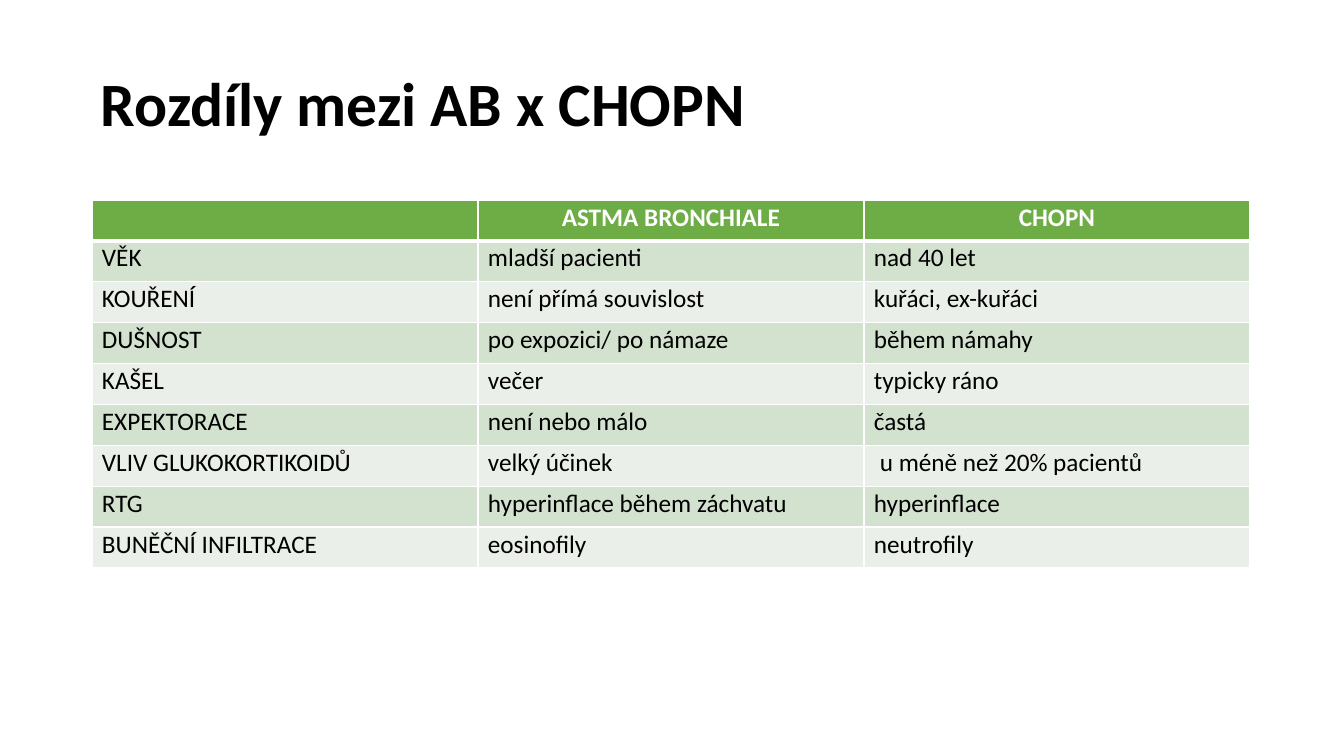
from lxml import etree
from pptx import Presentation
from pptx.dml.color import RGBColor
from pptx.enum.text import MSO_ANCHOR, PP_ALIGN
from pptx.oxml.ns import qn
from pptx.util import Emu, Pt

LEFT, CENTER = PP_ALIGN.LEFT, PP_ALIGN.CENTER
TOP = MSO_ANCHOR.TOP
FONT = "Calibri"
COLORS = {
    "white": "FFFFFF",
    "black": "000000",
    "header": "6EAC46",
    "band_dark": "D3E1CF",
    "band_light": "EBEFE9",
}
ROWS = [
    ["", "ASTMA BRONCHIALE", "CHOPN"],
    ["VĚK", "mladší pacienti", "nad 40 let"],
    ["KOUŘENÍ", "není přímá souvislost", "kuřáci, ex-kuřáci"],
    ["DUŠNOST", "po expozici/ po námaze", "během námahy"],
    ["KAŠEL", "večer", "typicky ráno"],
    ["EXPEKTORACE", "není nebo málo", "častá"],
    ["VLIV GLUKOKORTIKOIDŮ", "velký účinek", "u méně než 20% pacientů"],
    ["RTG", "hyperinflace během záchvatu", "hyperinflace"],
    ["BUNĚČNÍ INFILTRACE", "eosinofily", "neutrofily"],
]
INDENTED = "u méně než 20% pacientů"


def px(n):
    return Emu(round(n * 914400 / 100.8))


def format_text(tf, size, bold, color, align):
    p = tf.paragraphs[0]
    p.alignment = align
    p.space_before = Pt(1.4)
    for font in [p.font] + [r.font for r in p.runs]:
        font.name = FONT
        font.size = Pt(size)
        font.bold = bold
        font.color.rgb = RGBColor.from_string(COLORS[color])


prs = Presentation()
prs.slide_width, prs.slide_height = px(1344), px(756)
s = prs.slides.add_slide(prs.slide_layouts[5])

title = s.shapes.title
title.left, title.top, title.width, title.height = px(101), px(64), px(1142), px(77)
tf = title.text_frame
tf.text = "Rozdíly mezi AB x CHOPN"
tf.vertical_anchor = TOP
tf.margin_left = tf.margin_right = tf.margin_bottom = 0
tf.margin_top = px(1)
format_text(tf, 44, True, "black", LEFT)

table = s.shapes.add_table(len(ROWS), 3, px(92), px(200), px(1158), px(368)).table
for i, texts in enumerate(ROWS):
    header = i == 0
    band = "header" if header else "band_dark" if i % 2 else "band_light"
    for j, text in enumerate(texts):
        cell = table.cell(i, j)
        cell.text = text
        cell.vertical_anchor = TOP
        cell.margin_left = 0 if header else px(16 if text == INDENTED else 10)
        cell.margin_right = cell.margin_bottom = 0
        cell.margin_top = px(2)
        format_text(cell.text_frame, 18, header, "white" if header else "black",
                    CENTER if header else LEFT)
        tcPr = cell._tc.get_or_add_tcPr()
        for side in ("lnL", "lnR", "lnT", "lnB"):
            thick = (i, side) in ((0, "lnB"), (1, "lnT"))
            ln = etree.SubElement(tcPr, qn("a:" + side), w=str(Pt(3 if thick else 1)))
            fill = etree.SubElement(ln, qn("a:solidFill"))
            etree.SubElement(fill, qn("a:srgbClr"), val=COLORS["white"])
        cell.fill.solid()
        cell.fill.fore_color.rgb = RGBColor.from_string(COLORS[band])

prs.save("out.pptx")
